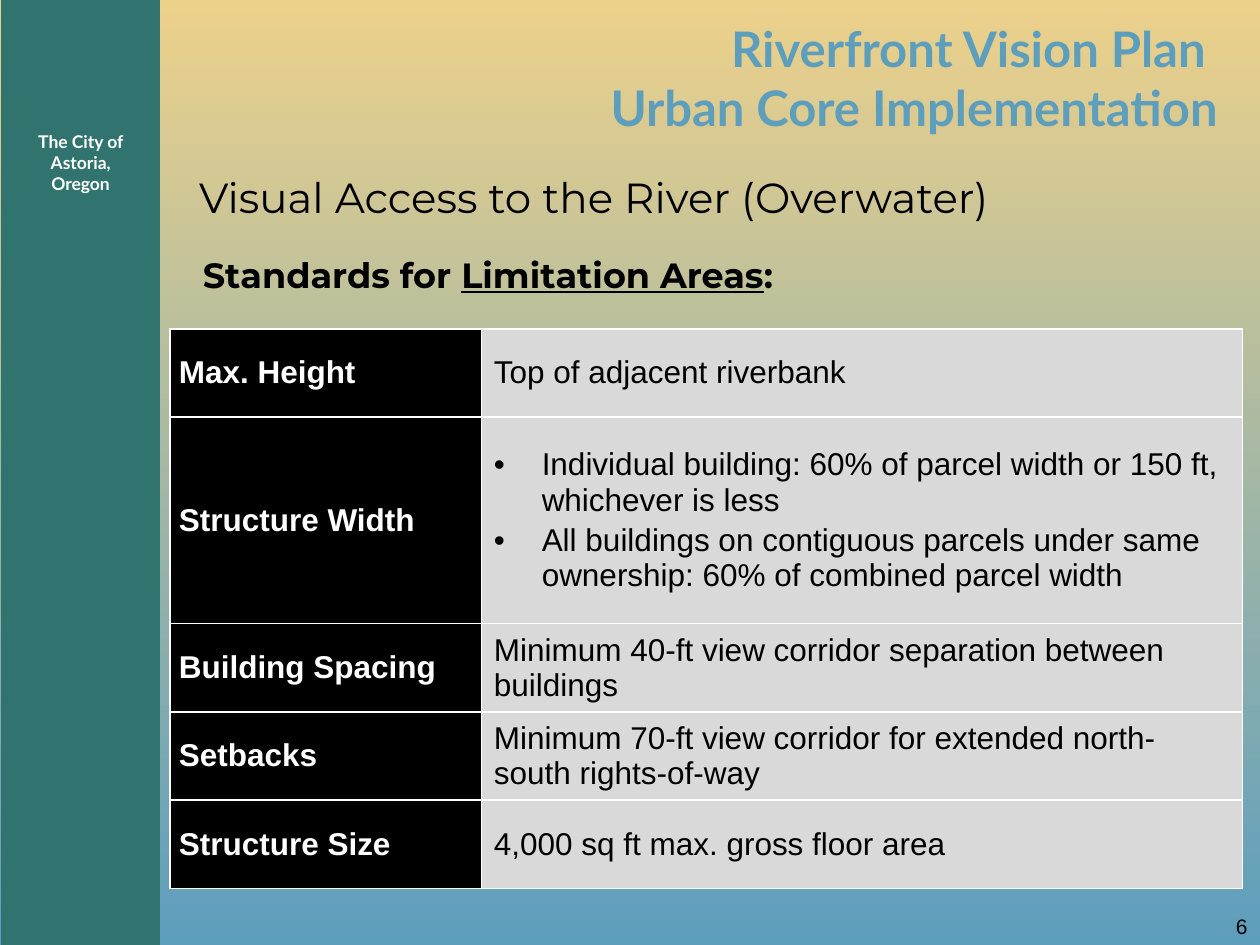
import pptx
import pptx.dml.color
import pptx.enum.shapes
import pptx.enum.text
import pptx.oxml
import pptx.oxml.ns
import pptx.util

Inches, Pt = pptx.util.Inches, pptx.util.Pt
ALIGN = pptx.enum.text.PP_ALIGN
ANCHOR = pptx.enum.text.MSO_ANCHOR

# Content
TITLE = "Visual Access to the River (Overwater)"
HEADER = "Riverfront Vision Plan \vUrban Core Implementation"
SIDEBAR = "The City of Astoria, Oregon"
PAGE_NUMBER = "6"
SUBHEADING = [("Standards for ", False), ("Limitation Areas", True), (":", False)]
STANDARDS = [
    ("Max. Height", ["Top of adjacent riverbank"]),
    ("Structure Width", [
        "Individual building: 60% of parcel width or 150 ft, whichever is less",
        "All buildings on contiguous parcels under same ownership: "
        "60% of combined parcel width",
    ]),
    ("Building Spacing", ["Minimum 40-ft view corridor separation between buildings"]),
    ("Setbacks", ["Minimum 70-ft view corridor for extended north-south rights-of-way"]),
    ("Structure Size", ["4,000 sq ft max. gross floor area"]),
]

# Layout in inches
WIDTH, HEIGHT = 10, 7.5
TABLE_LEFT, TABLE_TOP = 1.35, 2.61
COLUMNS = (2.47, 6.04)
ROW_HEIGHT, LIST_ROW_HEIGHT = 0.7, 1.64
BULLET_INDENT = 0.38

COLORS = {
    "sand": "ECD18B", "river": "5E9EBD", "teal": "31746F",
    "black": "000000", "white": "FFFFFF", "gray": "D9D9D9",
}


def rgb(name):
    return pptx.dml.color.RGBColor.from_string(COLORS[name])


def style(paragraph, font_name, size, color, bold=False, align=ALIGN.LEFT):
    paragraph.alignment = align
    font = paragraph.font
    font.name, font.size, font.bold = font_name, Pt(size), bold
    font.color.rgb = rgb(color)


def add_rectangle(slide, left, width):
    shape = slide.shapes.add_shape(
        pptx.enum.shapes.MSO_SHAPE.RECTANGLE,
        Inches(left), 0, Inches(width), Inches(HEIGHT))
    shape.shadow.inherit = False
    shape.line.fill.background()
    return shape


def add_text(slide, box, text, *font, **options):
    frame = slide.shapes.add_textbox(*map(Inches, box)).text_frame
    frame.word_wrap = True
    frame.text = text
    style(frame.paragraphs[0], *font, **options)
    return frame


def add_bullet(paragraph):
    properties = paragraph._p.get_or_add_pPr()
    properties.set("marL", str(Inches(BULLET_INDENT)))
    properties.set("indent", str(-Inches(BULLET_INDENT)))
    namespace = pptx.oxml.ns.nsdecls("a")
    for tag in ('buFont typeface="Arial"', 'buChar char="•"'):
        properties.append(pptx.oxml.parse_xml(f"<a:{tag} {namespace}/>"))


def format_cell(cell, paragraphs, fill, margins, color, bold, space_after):
    cell.vertical_anchor = ANCHOR.MIDDLE
    cell.margin_left = cell.margin_right = Inches(margins[0])
    cell.margin_top = cell.margin_bottom = Inches(margins[1])
    cell.text = "\n".join(paragraphs)
    for paragraph in cell.text_frame.paragraphs:
        if len(paragraphs) > 1:
            add_bullet(paragraph)
        style(paragraph, "Arial", 18, color, bold)
        paragraph.space_after = Pt(space_after)
    # Borders come before the fill in the cell properties
    properties = cell._tc.get_or_add_tcPr()
    for side in ("lnL", "lnR", "lnT", "lnB"):
        properties.append(pptx.oxml.parse_xml(
            f'<a:{side} w="{Pt(1)}" {pptx.oxml.ns.nsdecls("a")}><a:solidFill>'
            f'<a:srgbClr val="{COLORS["white"]}"/></a:solidFill></a:{side}>'))
    cell.fill.solid()
    cell.fill.fore_color.rgb = rgb(fill)


def add_standards_table(slide):
    heights = [LIST_ROW_HEIGHT if len(values) > 1 else ROW_HEIGHT
               for _, values in STANDARDS]
    table = slide.shapes.add_table(
        len(STANDARDS), len(COLUMNS), Inches(TABLE_LEFT), Inches(TABLE_TOP),
        Inches(sum(COLUMNS)), Inches(sum(heights))).table
    table.first_row = table.horz_banding = False
    for column, width in zip(table.columns, COLUMNS):
        column.width = Inches(width)
    for row, height, (label, values) in zip(table.rows, heights, STANDARDS):
        row.height = Inches(height)
        format_cell(row.cells[0], [label], "black", (0.07, 0), "white", True, 0)
        format_cell(row.cells[1], values, "gray", (0.1, 0.05), "black", False, 3)


def main():
    presentation = pptx.Presentation()
    presentation.slide_width, presentation.slide_height = Inches(WIDTH), Inches(HEIGHT)
    slide = presentation.slides.add_slide(presentation.slide_layouts[5])

    # Gradient backdrop and sidebar
    backdrop = add_rectangle(slide, 0, WIDTH)
    backdrop.fill.gradient()
    backdrop.fill.gradient_angle = 270
    for stop, color, position in zip(
            backdrop.fill.gradient_stops, ("sand", "river"), (0, 1)):
        stop.color.rgb = rgb(color)
        stop.position = position
    sidebar = add_rectangle(slide, 0.01, 1.26)
    sidebar.fill.solid()
    sidebar.fill.fore_color.rgb = rgb("teal")

    # Header, sidebar label and page number
    add_text(slide, (1.51, 0.1, 8.25, 1.04), HEADER,
             "Lato", 28, "river", bold=True, align=ALIGN.RIGHT)
    add_text(slide, (0.2, 0.99, 0.88, 0.77), SIDEBAR,
             "Lato", 10, "white", bold=True, align=ALIGN.CENTER)
    add_text(slide, (9.49, 7.2, 0.51, 0.3), PAGE_NUMBER,
             "Arial", 12, "black", align=ALIGN.RIGHT)

    # Title, brought in front of the backdrop
    title = slide.shapes.title
    title.left, title.top, title.width, title.height = map(
        Inches, (1.48, 1.31, 8.38, 0.51))
    title.text = TITLE
    title.text_frame.auto_size = pptx.enum.text.MSO_AUTO_SIZE.NONE
    title.text_frame.vertical_anchor = ANCHOR.TOP
    style(title.text_frame.paragraphs[0], "Montserrat", 24, "black")
    slide.shapes._spTree.append(title._element)

    add_standards_table(slide)

    # Subheading with its key words underlined
    frame = add_text(slide, (1.61, 2.01, 8.39, 0.4), "",
                     "Montserrat", 20, "black", bold=True)
    frame.margin_left = frame.margin_right = 0
    frame.margin_top = frame.margin_bottom = 0
    for text, underlined in SUBHEADING:
        run = frame.paragraphs[0].add_run()
        run.text = text
        run.font.underline = underlined

    presentation.save("out.pptx")


if __name__ == "__main__":
    main()
